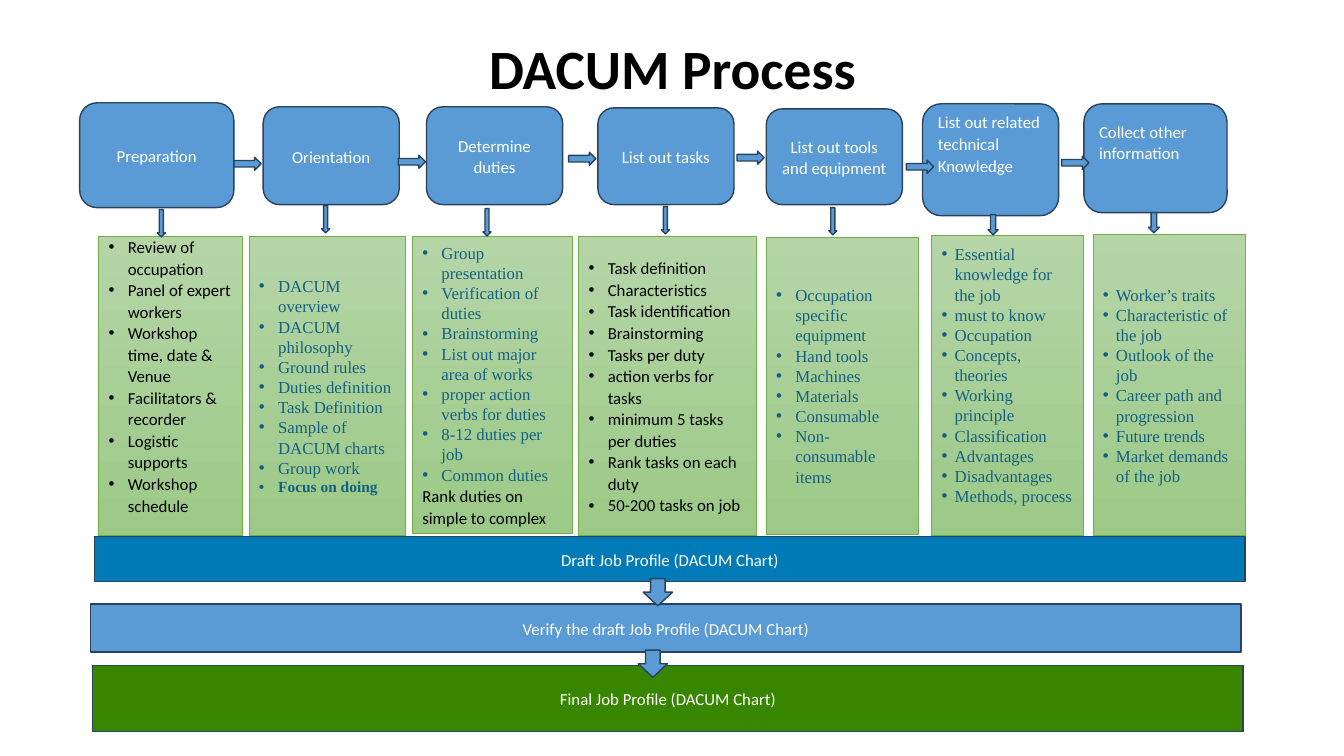
import pptx
import pptx.util
import pptx.dml.color
import pptx.enum.shapes
import pptx.enum.text
from lxml import etree

Inches, Pt = pptx.util.Inches, pptx.util.Pt
RGBColor = pptx.dml.color.RGBColor
MSO_SHAPE = pptx.enum.shapes.MSO_SHAPE
PP_ALIGN = pptx.enum.text.PP_ALIGN
MIDDLE = pptx.enum.text.MSO_ANCHOR.MIDDLE

BLACK = RGBColor(0x00, 0x00, 0x00)
WHITE = RGBColor(0xFF, 0xFF, 0xFF)
BLUE = RGBColor(0x5B, 0x9B, 0xD5)
NAVY = RGBColor(0x28, 0x44, 0x5D)
TEAL = RGBColor(0x15, 0x60, 0x82)
DEEP_BLUE = RGBColor(0x00, 0x7B, 0xB8)
DARK_GREEN = RGBColor(0x38, 0x86, 0x00)
EDGE_GREEN = RGBColor(0x70, 0xAD, 0x47)
LIGHT_GREEN = RGBColor(0xB5, 0xD5, 0xA7)
MID_GREEN = RGBColor(0x9C, 0xC9, 0x87)

prs = pptx.Presentation()
prs.slide_width, prs.slide_height = Inches(13.33), Inches(7.5)
s = prs.slides.add_slide(prs.slide_layouts[6])


def add_shape(kind, left, top, width, height, fill=BLUE, line=NAVY, weight=1):
    """Add a preset shape; fill is a colour, or a pair for a vertical gradient."""
    sp = s.shapes.add_shape(kind, Inches(left), Inches(top), Inches(width), Inches(height))
    sp.shadow.inherit = False
    if isinstance(fill, RGBColor):
        sp.fill.solid()
        sp.fill.fore_color.rgb = fill
    else:
        sp.fill.gradient()
        sp.fill.gradient_angle = 270
        for stop, color in zip(sp.fill.gradient_stops, fill):
            stop.color.rgb = color
    sp.line.color.rgb = line
    sp.line.width = Pt(weight)
    return sp


def add_text(sp, text, size=12, font="Calibri", color=WHITE, bold=False,
             align=PP_ALIGN.CENTER, spacing=1.07, after=8, indent=0):
    """Append one paragraph to a shape; an indent gives it a bullet."""
    tf = sp.text_frame
    tf.word_wrap = True
    tf.vertical_anchor = MIDDLE
    p = tf.add_paragraph() if tf.text else tf.paragraphs[0]
    p.alignment, p.line_spacing, p.space_after = align, spacing, Pt(after)
    if indent:
        pPr = p._p.get_or_add_pPr()
        pPr.set("marL", str(Inches(indent)))
        pPr.set("indent", str(-Inches(indent)))
        bullet_ns = "{http://schemas.openxmlformats.org/drawingml/2006/main}"
        etree.SubElement(pPr, bullet_ns + "buFont").set("typeface", "Arial")
        etree.SubElement(pPr, bullet_ns + "buChar").set("char", "•")
    r = p.add_run()
    r.text = text
    r.font.size, r.font.name, r.font.bold = Pt(size), font, bold
    r.font.color.rgb = color


title = s.shapes.add_textbox(Inches(0.92), Inches(0.4), Inches(11.5), Inches(0.62))
add_text(title, "DACUM Process", size=39.6, color=BLACK, bold=True, spacing=0.9, after=0)

# Process steps; the last two sit high and left-aligned
steps = [
    ("Preparation", 0.79, 1.02, 1.53, 1.04),
    ("Orientation", 2.61, 1.06, 1.35, 0.97),
    ("Determine duties", 4.23, 1.06, 1.35, 0.97),
    ("List out tasks", 5.93, 1.07, 1.35, 0.96),
    ("List out tools and equipment", 7.6, 1.08, 1.35, 0.95),
    ("List out related technical Knowledge", 9.15, 1.03, 1.35, 1.11),
    ("Collect other information", 10.75, 1.03, 1.42, 1.08),
]
for i, (label, *box) in enumerate(steps):
    sp = add_shape(MSO_SHAPE.ROUNDED_RECTANGLE, *box)
    raised = i >= 5
    if raised:
        sp.text_frame.margin_bottom = Inches(0.38)
    add_text(sp, label, align=PP_ALIGN.LEFT if raised else PP_ALIGN.CENTER)

for left, top in [(2.32, 1.56), (3.95, 1.54), (5.64, 1.51),
                  (7.31, 1.5), (8.99, 1.59), (10.53, 1.55)]:
    add_shape(MSO_SHAPE.RIGHT_ARROW, left, top, 0.27, 0.13)

# Detail columns: box, bullet indent, bottom margin, items
plain = dict(color=BLACK, align=PP_ALIGN.LEFT, after=0)
serif = dict(font="Times New Roman", color=TEAL, align=PP_ALIGN.LEFT, spacing=1, after=0)
columns = [
    ((0.98, 2.35, 1.42, 2.96), plain, 0.19, 0.26, [
        "Review of occupation", "Panel of expert workers", "Workshop time, date & Venue",
        "Facilitators & recorder", "Logistic supports", "Workshop schedule"]),
    ((2.47, 2.35, 1.55, 2.96), serif, 0.19, 0.05, [
        "DACUM overview", "DACUM philosophy", "Ground rules", "Duties definition",
        "Task Definition", "Sample of DACUM charts", "Group work"]),
    ((4.09, 2.35, 1.59, 2.94), serif, 0.19, 0.05, [
        "Group presentation", "Verification of duties", "Brainstorming",
        "List out major area of works", "proper action verbs for duties",
        "8-12 duties per job", "Common duties"]),
    ((5.74, 2.35, 1.76, 2.96), plain, 0.19, 0.05, [
        "Task definition", "Characteristics", "Task identification", "Brainstorming",
        "Tasks per duty", "action verbs for tasks", "minimum 5 tasks per duties",
        "Rank tasks on each duty", "50-200 tasks on job"]),
    ((7.6, 2.35, 1.51, 2.95), serif, 0.19, 0.05, [
        "Occupation specific equipment", "Hand tools", "Machines", "Materials",
        "Consumable", "Non-consumable items"]),
    ((9.24, 2.34, 1.51, 2.97), serif, 0.13, 0.26, [
        "Essential knowledge for the job", "must to know", "Occupation",
        "Concepts, theories", "Working principle", "Classification", "Advantages",
        "Disadvantages", "Methods, process"]),
    ((10.84, 2.33, 1.51, 2.98), serif, 0.13, 0.05, [
        "Worker’s traits", "Characteristic of the job", "Outlook of the job",
        "Career path and progression", "Future trends", "Market demands of the job"]),
]
details = []
for box, style, indent, bottom, items in columns:
    sp = add_shape(MSO_SHAPE.RECTANGLE, *box, fill=(LIGHT_GREEN, MID_GREEN),
                   line=EDGE_GREEN, weight=0.5)
    sp.text_frame.margin_bottom = Inches(bottom)
    for item in items:
        add_text(sp, item, indent=indent, **style)
    details.append(sp)
add_text(details[1], "Focus on doing", size=11, bold=True, indent=0.19, **serif)
add_text(details[2], "Rank duties on simple to complex", color=BLACK, align=PP_ALIGN.LEFT)

for left, top, width, height in [
        (1.56, 2.08, 0.08, 0.27), (3.19, 2.04, 0.08, 0.27), (4.79, 2.07, 0.08, 0.27),
        (6.56, 2.05, 0.08, 0.27), (8.22, 2.06, 0.08, 0.27), (9.8, 2.13, 0.1, 0.2),
        (11.39, 2.11, 0.11, 0.2)]:
    add_shape(MSO_SHAPE.DOWN_ARROW, left, top, width, height)

# Job profile stages
for label, left, top, height, color in [
        ("Draft Job Profile (DACUM Chart)", 0.94, 5.32, 0.45, DEEP_BLUE),
        ("Verify the draft Job Profile (DACUM Chart)", 0.9, 5.99, 0.48, BLUE),
        ("Final Job Profile (DACUM Chart)", 0.92, 6.6, 0.66, DARK_GREEN)]:
    add_text(add_shape(MSO_SHAPE.RECTANGLE, left, top, 11.41, height, fill=color), label)

for left, top in [(6.38, 5.74), (6.33, 6.45)]:
    add_shape(MSO_SHAPE.DOWN_ARROW, left, top, 0.29, 0.27)

prs.save("out.pptx")
